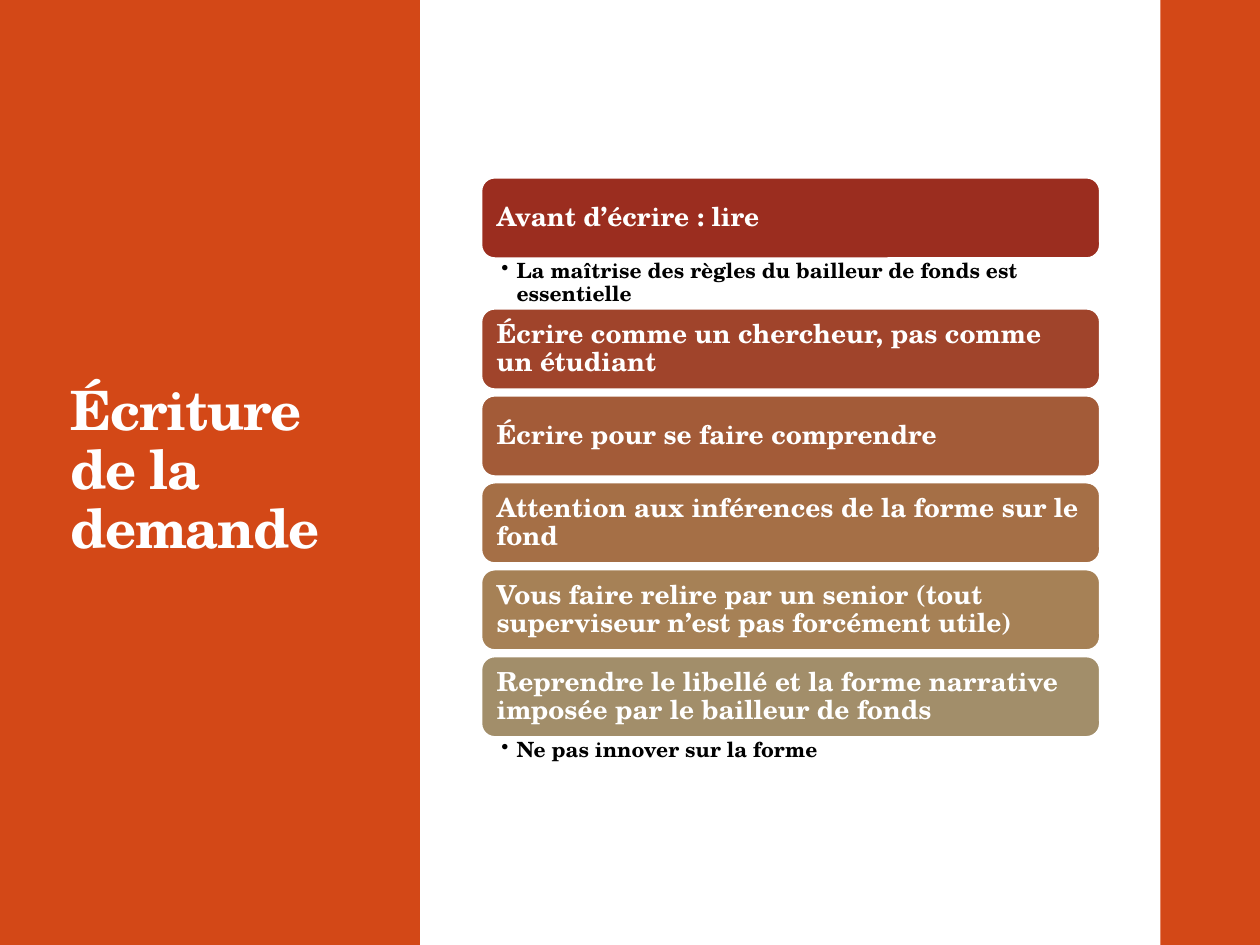
from lxml import etree
from pptx import Presentation
from pptx import util as u
from pptx.dml.color import RGBColor
from pptx.enum import shapes, text
from pptx.oxml.ns import qn

TITLE = "Écriture de la demande"
STEPS = [
    ("Avant d’écrire : lire", "La maîtrise des règles du bailleur de fonds est essentielle"),
    ("Écrire comme un chercheur, pas comme un étudiant", None),
    ("Écrire pour se faire comprendre", None),
    ("Attention aux inférences de la forme sur le fond", None),
    ("Vous faire relire par un senior (tout superviseur n’est pas forcément utile)", None),
    ("Reprendre le libellé et la forme narrative imposée par le bailleur de fonds",
     "Ne pas innover sur la forme"),
]

THEME = {
    "font": "TeX Gyre Schola",
    "accent": "D34817",
    "light": "FFFFFF",
    "dark": "000000",
    "steps": ["9B2D1F", "A0442B", "A35B38", "A56F46", "A68156", "A28E6A"],
    "title_size": 31, "step_size": 15, "note_size": 12, "outline": 1.1,
}

WIDTH, HEIGHT = 10, 7.5
PANEL_WIDTH = WIDTH / 3
BAR_LEFT = 9.21
LIST_LEFT, LIST_TOP, LIST_WIDTH = 3.82, 1.41, 4.91
STEP_HEIGHT, STEP_GAP = 0.64, 0.05
NOTE_HEIGHTS = {0: 0.4, 5: 0.27}
NOTE_INDENT = 0.12


def rgb(value):
    return RGBColor.from_string(value)


def apply(target, formats):
    for name, value in formats.items():
        setattr(target, name, value)


def write(frame, words, size, color, anchor, insets=(0.1, 0.05, 0.1, 0.05)):
    sides = ("margin_left", "margin_top", "margin_right", "margin_bottom")
    apply(frame, {"word_wrap": True, "vertical_anchor": anchor,
                  **{side: u.Inches(inset) for side, inset in zip(sides, insets)}})
    paragraph = frame.paragraphs[0]
    apply(paragraph, {"alignment": text.PP_ALIGN.LEFT, "line_spacing": 0.9})
    run = paragraph.add_run()
    run.text = words
    apply(run.font, {"name": THEME["font"], "size": u.Pt(size), "bold": True})
    run.font.color.rgb = rgb(color)
    return paragraph


def add_block(slide, preset, box, color, outline=None):
    block = slide.shapes.add_shape(preset, *map(u.Inches, box))
    block.shadow.inherit = False
    block.fill.solid()
    block.fill.fore_color.rgb = rgb(color)
    if outline:
        block.line.color.rgb = rgb(outline)
        block.line.width = u.Pt(THEME["outline"])
    else:
        block.line.fill.background()
    return block


def add_title(slide):
    title = slide.shapes.add_textbox(*map(u.Inches, (0.46, 0.91, 2.23, 5.67)))
    paragraph = write(title.text_frame, TITLE, THEME["title_size"], THEME["light"],
                      text.MSO_ANCHOR.MIDDLE)
    paragraph.runs[0].font._element.set("spc", "-70")


def add_note(slide, words, top, height):
    note = slide.shapes.add_textbox(*map(u.Inches, (LIST_LEFT, top, LIST_WIDTH, height)))
    paragraph = write(note.text_frame, words, THEME["note_size"], THEME["dark"],
                      text.MSO_ANCHOR.TOP, (0.16, 0.02, 0.12, 0.02))
    paragraph.level = 1
    properties = paragraph._p.get_or_add_pPr()
    properties.set("marL", str(u.Inches(NOTE_INDENT)))
    properties.set("indent", str(-u.Inches(NOTE_INDENT)))
    etree.SubElement(properties, qn("a:buChar")).set("char", "•")


def add_steps(slide):
    top = LIST_TOP
    for index, ((words, remark), color) in enumerate(zip(STEPS, THEME["steps"])):
        step = add_block(slide, shapes.MSO_SHAPE.ROUNDED_RECTANGLE,
                         (LIST_LEFT, top, LIST_WIDTH, STEP_HEIGHT), color, THEME["light"])
        write(step.text_frame, words, THEME["step_size"], THEME["light"],
              text.MSO_ANCHOR.MIDDLE, (0.09,) * 4)
        top += STEP_HEIGHT
        if remark:
            add_note(slide, remark, top, NOTE_HEIGHTS[index])
        top += NOTE_HEIGHTS.get(index, STEP_GAP)


def main():
    deck = Presentation()
    apply(deck, {"slide_width": u.Inches(WIDTH), "slide_height": u.Inches(HEIGHT)})
    slide = deck.slides.add_slide(deck.slide_layouts[6])
    for left, width in ((0, PANEL_WIDTH), (BAR_LEFT, WIDTH - BAR_LEFT)):
        add_block(slide, shapes.MSO_SHAPE.RECTANGLE, (left, 0, width, HEIGHT), THEME["accent"])
    add_title(slide)
    add_steps(slide)
    deck.save("out.pptx")


if __name__ == "__main__":
    main()
